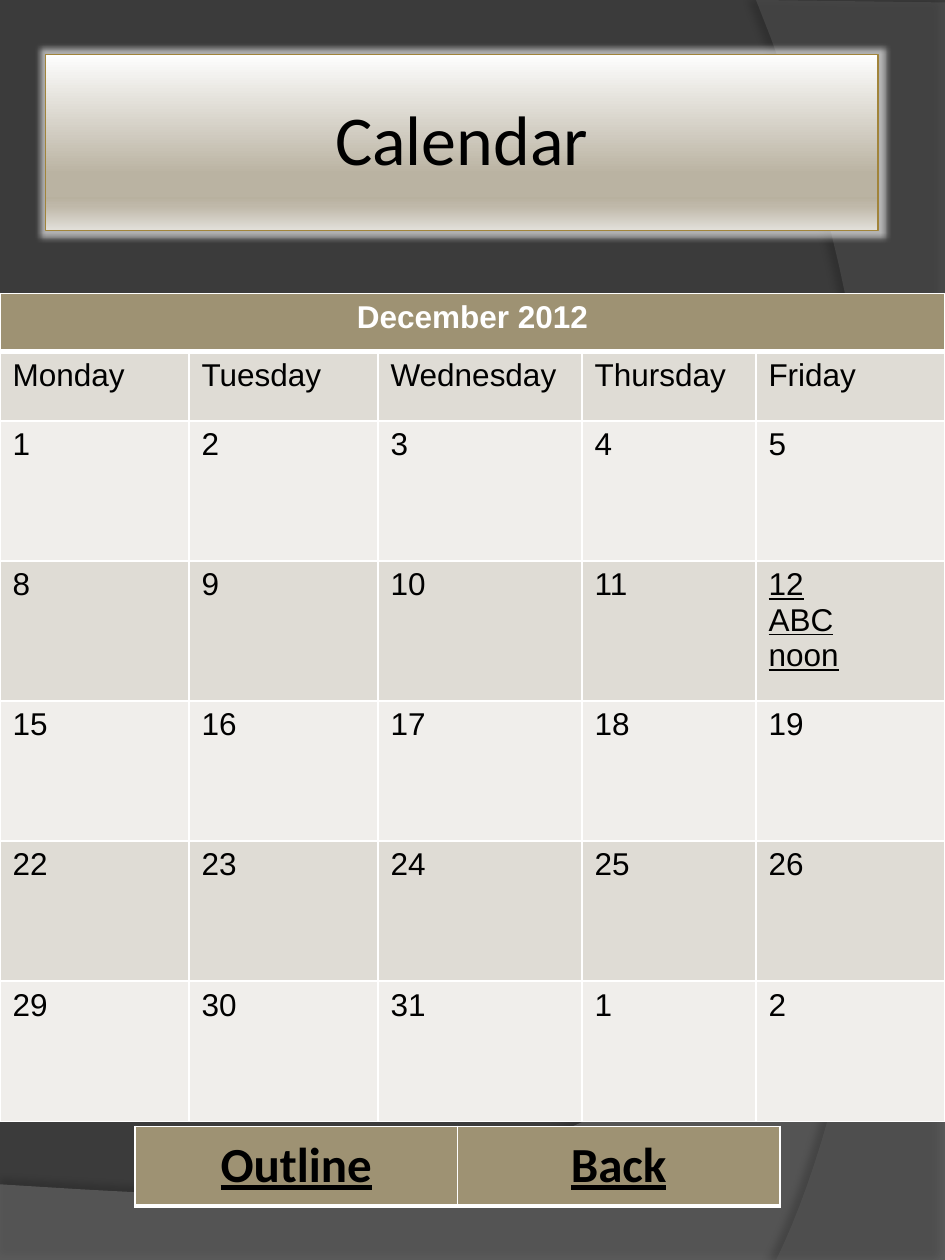
from lxml import etree
from pptx import Presentation
from pptx.dml.color import RGBColor
from pptx.enum.text import MSO_ANCHOR, MSO_AUTO_SIZE, PP_ALIGN
from pptx.util import Inches, Pt

LEFT, CENTER = PP_ALIGN.LEFT, PP_ALIGN.CENTER
TOP, MIDDLE = MSO_ANCHOR.TOP, MSO_ANCHOR.MIDDLE
NO_AUTOFIT = MSO_AUTO_SIZE.NONE
TITLE_ONLY = 5

COLUMNS, ROWS = 75, 100
UNIT = Inches(0.1)
DRAWING = "http://schemas.openxmlformats.org/drawingml/2006/main"

COLORS = {
    "background": "3B3B3B", "wave": "7F7F7F", "ribbon": "5E5E5E",
    "header": "9E9273", "band": "DFDCD5", "plain": "F0EEEB",
    "border": "FFFFFF", "title_line": "A1843A", "glow": "FFFFFF",
    "shadow": "000000", "text": "000000", "month": "FFFFFF",
}
TITLE_STOPS = [(0, "FEFEFE"), (68, "BAB3A2"), (81, "B8B19F"),
               (86, "BFB8A9"), (100, "E3E1DB")]
DAY_FONT = {"name": "Arial", "size": Pt(18), "bold": False}
MONTH_FONT = DAY_FONT | {"bold": True}
EVENT_FONT = DAY_FONT | {"underline": True}
TITLE_FONT = {"name": "Calibri", "size": Pt(40), "bold": False}
LINK_FONT = {"name": "Calibri", "size": Pt(28), "bold": True, "underline": True}


def grid(count):
    return round(count * UNIT)


def rgb(name):
    return RGBColor.from_string(COLORS[name])


def add_xml(parent, markup):
    """Append DrawingML whose root tag has the a: prefix."""
    tag_end = min(i for i in (markup.find(c) for c in " >/") if i > 0)
    parent.append(etree.fromstring(
        f'{markup[:tag_end]} xmlns:a="{DRAWING}"{markup[tag_end:]}'))


def color_xml(color, alpha=100):
    return f'<a:srgbClr val="{color}"><a:alpha val="{alpha * 1000}"/></a:srgbClr>'


def curve(start, control1, control2, end, steps=40):
    """Points along a cubic Bezier curve."""
    points = []
    for step in range(steps + 1):
        t = step / steps
        weights = ((1 - t) ** 3, 3 * t * (1 - t) ** 2, 3 * t * t * (1 - t), t ** 3)
        points.append(tuple(
            sum(w * p for w, p in zip(weights, axis))
            for axis in zip(start, control1, control2, end)))
    return points


class CalendarSlide:
    """Holds the style and the slide being filled; lengths are grid units."""

    def __init__(self, deck):
        self.slide = deck.slides.add_slide(deck.slide_layouts[TITLE_ONLY])
        self.shapes = self.slide.shapes
        fill = self.slide.background.fill
        fill.solid()
        fill.fore_color.rgb = rgb("background")

    def set_text(self, frame, text, font, color="text", align=LEFT):
        frame.text = text
        for paragraph in frame.paragraphs:
            paragraph.alignment = align
            for run in paragraph.runs:
                for attribute, value in font.items():
                    setattr(run.font, attribute, value)
                run.font.color.rgb = rgb(color)

    def backdrop(self, points, color, alpha, shadow):
        builder = self.shapes.build_freeform(
            *map(grid, points[0]), scale=1.0)
        builder.add_line_segments([tuple(map(grid, p)) for p in points[1:]])
        panel = builder.convert_to_shape()
        panel.line.fill.background()
        panel.fill.solid()
        panel.fill.fore_color.rgb = rgb(color)
        properties = panel._element.spPr
        add_xml(properties.find(f".//{{{DRAWING}}}srgbClr"),
                f'<a:alpha val="{alpha * 1000}"/>')
        opacity, blur, distance, angle = shadow
        add_xml(properties,
                f'<a:effectLst><a:outerShdw blurRad="{Pt(blur)}" dist="{Pt(distance)}" '
                f'dir="{angle * 60000}" algn="ctr" rotWithShape="0">'
                f'{color_xml(COLORS["shadow"], opacity)}</a:outerShdw></a:effectLst>')

    def title(self, text, left, top, width, height):
        title = self.shapes.title
        title.left, title.top = grid(left), grid(top)
        title.width, title.height = grid(width), grid(height)
        properties = title._element.spPr
        stops = "".join(f'<a:gs pos="{share * 1000}">{color_xml(color)}</a:gs>'
                        for share, color in TITLE_STOPS)
        add_xml(properties, '<a:prstGeom prst="rect"><a:avLst/></a:prstGeom>')
        add_xml(properties, f'<a:gradFill rotWithShape="1"><a:gsLst>{stops}</a:gsLst>'
                            '<a:lin ang="5400000" scaled="0"/></a:gradFill>')
        title.line.color.rgb = rgb("title_line")
        title.line.width = Pt(0.75)
        add_xml(properties, f'<a:effectLst><a:glow rad="{UNIT}">'
                            f'{color_xml(COLORS["glow"], 60)}</a:glow></a:effectLst>')
        frame = title.text_frame
        frame.auto_size, frame.word_wrap = NO_AUTOFIT, True
        frame.vertical_anchor = MIDDLE
        for side in ("left", "top", "right", "bottom"):
            setattr(frame, f"margin_{side}", UNIT)
        self.set_text(frame, text, TITLE_FONT, align=CENTER)
        frame.paragraphs[0].line_spacing = 0.9
        self.shapes._spTree.append(title._element)  # bring in front of the backdrop

    def table(self, left, top, widths, heights):
        table = self.shapes.add_table(
            len(heights), len(widths), grid(left), grid(top),
            grid(sum(widths)), grid(sum(heights))).table
        table.first_row = table.horz_banding = False
        for column, width in zip(table.columns, widths):
            column.width = grid(width)
        for row, height in zip(table.rows, heights):
            row.height = grid(height)
        return table

    def cell(self, cell, text, fill, font, color="text", align=LEFT,
             anchor=TOP, top_line=1, bottom_line=1):
        properties = cell._tc.get_or_add_tcPr()
        for side, width in zip("LRTB", (1, 1, top_line, bottom_line)):
            add_xml(properties, f'<a:ln{side} w="{Pt(width)}"><a:solidFill>'
                                f'{color_xml(COLORS["border"])}</a:solidFill></a:ln{side}>')
        cell.fill.solid()
        cell.fill.fore_color.rgb = rgb(fill)
        cell.vertical_anchor = anchor
        self.set_text(cell.text_frame, text, font, color, align)

    def calendar(self, month, weekdays, month_length, events):
        weeks = 5
        table = self.table(0, 23.3, [15, 15, 16.2, 13.8, 15],
                           [4.6, 5.5] + [11.12] * weeks)
        for column, weekday in enumerate(weekdays):
            self.cell(table.cell(0, column), "" if column else month, "header",
                      MONTH_FONT, "month", CENTER, bottom_line=3)
            self.cell(table.cell(1, column), weekday, "band", DAY_FONT, top_line=3)
            for week in range(weeks):
                day = (week * 7 + column) % month_length + 1
                event = events.get(day, [])
                self.cell(table.cell(week + 2, column), "\n".join([str(day), *event]),
                          "band" if week % 2 else "plain",
                          EVENT_FONT if event else DAY_FONT)
        table.cell(0, 0).merge(table.cell(0, len(weekdays) - 1))

    def navigation(self, labels):
        table = self.table(10.7, 89.4, [25.6] * len(labels), [6.3])
        for column, label in enumerate(labels):
            self.cell(table.cell(0, column), label, "header", LINK_FONT,
                      align=CENTER, anchor=MIDDLE, bottom_line=3)


def main():
    deck = Presentation()
    deck.slide_width, deck.slide_height = grid(COLUMNS), grid(ROWS)
    page = CalendarSlide(deck)
    page.backdrop([(0, ROWS), (COLUMNS, ROWS)]
                  + curve((COLUMNS, 69.3), (41.9, 97.2), (29.3, 95.8), (0, 94)),
                  "wave", 45, (35, 4, 3.5, 270))
    page.backdrop([(COLUMNS, 0.2), (COLUMNS, ROWS)]
                  + curve((61.6, ROWS), (70.1, 82.6), (76.3, 40.1), (60, 0)),
                  "ribbon", 40, (45, 4, 4, 180))
    page.calendar("December 2012",
                  ["Monday", "Tuesday", "Wednesday", "Thursday", "Friday"],
                  31, {12: ["ABC", "noon"]})
    page.title("Calendar", 3.6, 4.3, 66.1, 14)
    page.navigation(["Outline", "Back"])
    deck.save("out.pptx")


if __name__ == "__main__":
    main()
